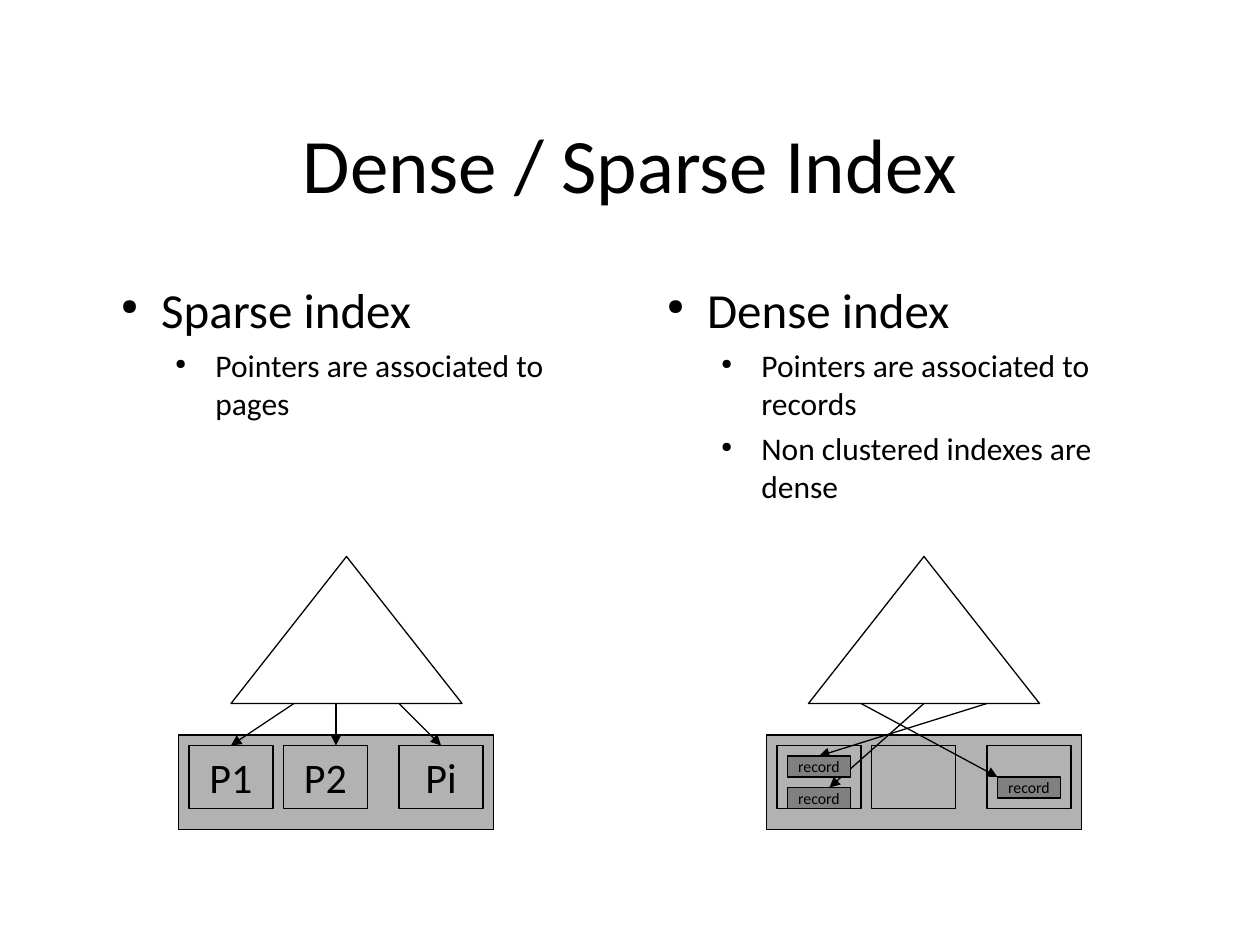
from pptx import Presentation
from pptx.dml.color import RGBColor
from pptx.enum.shapes import MSO_CONNECTOR, MSO_SHAPE
from pptx.enum.text import MSO_ANCHOR, MSO_AUTO_SIZE, PP_ALIGN
from pptx.oxml.ns import qn
from pptx.util import Pt
from lxml.etree import SubElement

FONT = "Calibri"
BLACK, WHITE, PAGE_GRAY, RECORD_GRAY = "000000", "FFFFFF", "B2B2B2", "808080"
TRIANGLE_TOP, TRIANGLE_BASE = 318, 402
STORE_TOP, PAGE_TOP = 420, 426
PAGE_OFFSETS = (6, 60, 126)


def color(hex_string):
    return RGBColor.from_string(hex_string)


def format_text(paragraph, text, size):
    paragraph.text = text
    paragraph.font.name = FONT
    paragraph.font.size = Pt(size)
    paragraph.font.color.rgb = color(BLACK)


def add_title(slide, text):
    title = slide.shapes.title
    title.left, title.top, title.width, title.height = Pt(54), Pt(48), Pt(612), Pt(90)
    frame = title.text_frame
    frame.vertical_anchor = MSO_ANCHOR.MIDDLE
    format_text(frame.paragraphs[0], text, 44)
    frame.paragraphs[0].alignment = PP_ALIGN.CENTER


def add_bullet(paragraph, text, level):
    format_text(paragraph, text, (28, 18)[level])
    paragraph.level = level
    paragraph.space_before = Pt((6.3, 4.5)[level])
    properties = paragraph._p.get_or_add_pPr()
    properties.set("marL", str(Pt(31 * (level + 1))))
    properties.set("indent", str(Pt(-23)))
    bullet_size = SubElement(properties, qn("a:buSzPct"))
    bullet_size.set("val", "45000")
    bullet = SubElement(properties, qn("a:buChar"))
    bullet.set("char", "●")
    default_font = properties.find(qn("a:defRPr"))
    if default_font is not None:
        properties.append(default_font)


def add_bullet_list(slide, left, heading, points):
    box = slide.shapes.add_textbox(Pt(left), Pt(156), Pt(300), Pt(324))
    frame = box.text_frame
    frame.word_wrap = True
    frame.auto_size = MSO_AUTO_SIZE.NONE
    add_bullet(frame.paragraphs[0], heading, 0)
    for point in points:
        add_bullet(frame.add_paragraph(), point, 1)


def add_block(slide, left, top, width, height, fill, text="", size=24, kind=MSO_SHAPE.RECTANGLE):
    shape = slide.shapes.add_shape(kind, Pt(left), Pt(top), Pt(width), Pt(height))
    shape.shadow.inherit = False
    shape.fill.solid()
    shape.fill.fore_color.rgb = color(fill)
    shape.line.color.rgb = color(BLACK)
    shape.line.width = Pt(0.75)
    if text:
        frame = shape.text_frame
        frame.word_wrap = False
        frame.vertical_anchor = MSO_ANCHOR.MIDDLE
        format_text(frame.paragraphs[0], text, size)
        frame.paragraphs[0].alignment = PP_ALIGN.CENTER


def add_arrow(slide, start_x, end_x, end_y):
    arrow = slide.shapes.add_connector(
        MSO_CONNECTOR.STRAIGHT, Pt(start_x), Pt(TRIANGLE_BASE), Pt(end_x), Pt(end_y))
    arrow.line.color.rgb = color(BLACK)
    arrow.line.width = Pt(0.75)
    SubElement(arrow.line._get_or_add_ln(), qn("a:tailEnd")).set("type", "triangle")
    SubElement(arrow._element.spPr, qn("a:effectLst"))


def add_index(slide, triangle_left, store_left, page_labels, arrows):
    add_block(slide, triangle_left, TRIANGLE_TOP, 132, TRIANGLE_BASE - TRIANGLE_TOP,
              WHITE, kind=MSO_SHAPE.ISOSCELES_TRIANGLE)
    add_block(slide, store_left, STORE_TOP, 180, 54, PAGE_GRAY)
    for offset, label in zip(PAGE_OFFSETS, page_labels):
        add_block(slide, store_left + offset, PAGE_TOP, 48, 36, PAGE_GRAY, label)
    for arrow in arrows:
        add_arrow(slide, *arrow)


def main():
    presentation = Presentation()
    presentation.slide_width, presentation.slide_height = Pt(720), Pt(540)
    slide = presentation.slides.add_slide(presentation.slide_layouts[5])
    add_title(slide, "Dense / Sparse Index")
    add_bullet_list(slide, 54, "Sparse index", ["Pointers are associated to pages"])
    add_bullet_list(slide, 366, "Dense index",
                    ["Pointers are associated to records", "Non clustered indexes are dense"])
    add_index(slide, 132, 102, ("P1", "P2", "Pi"),
              [(168, 132, PAGE_TOP), (192, 192, PAGE_TOP), (228, 252, PAGE_TOP)])
    add_index(slide, 462, 438, ("", "", ""),
              [(492, 570, 444), (528, 474, 450), (564, 468, 432)])
    for left, top in ((450, 432), (450, 450), (570, 444)):
        add_block(slide, left, top, 36, 12, RECORD_GRAY, "record", 9)
    presentation.save("out.pptx")


if __name__ == "__main__":
    main()
